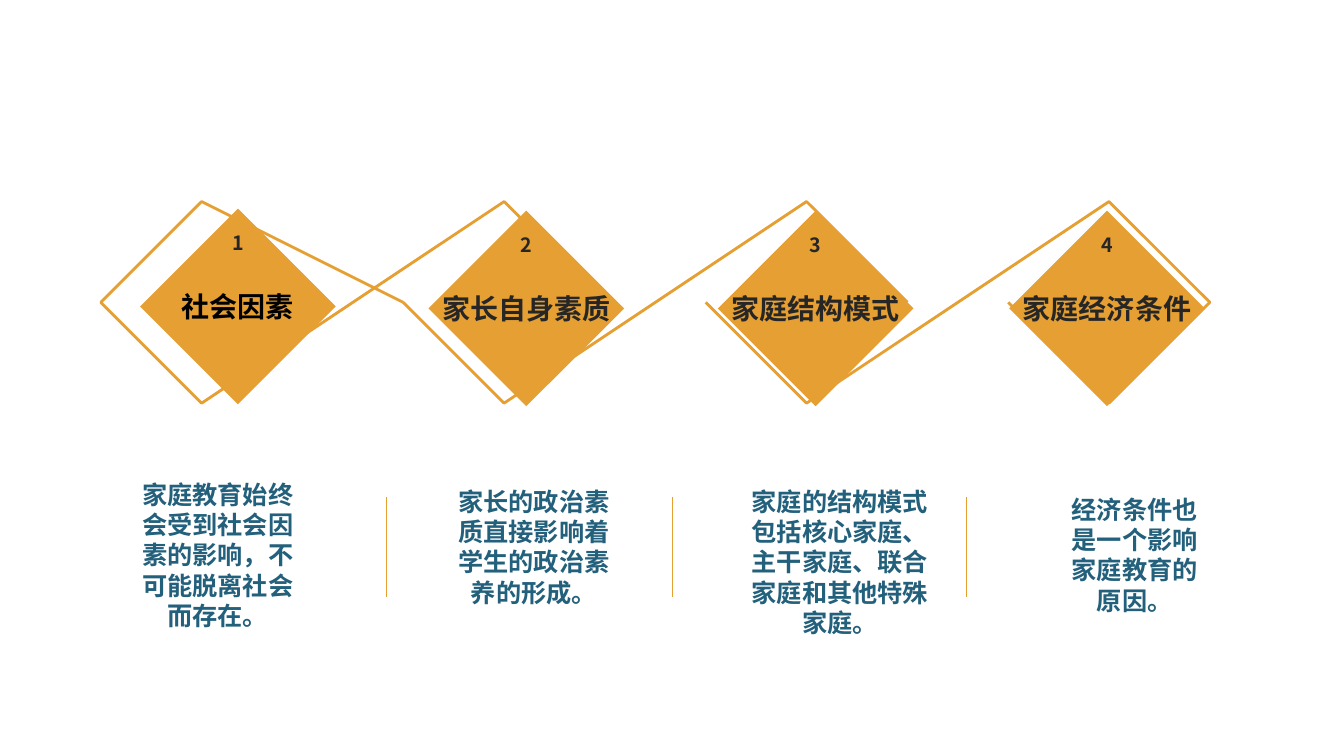
import pptx
import pptx.util
import pptx.dml.color
import pptx.enum.shapes
import pptx.enum.text
import pptx.oxml.ns
import lxml.etree

Inches = pptx.util.Inches
Pt = pptx.util.Pt
GOLD, DARK, BLUE = "E59F32", "262626", "23607C"
BOLD_JP, BOLD_SC = "Noto Sans CJK JP", "Noto Sans CJK SC"
BIG, SMALL = 1.94, 0.36

# Diamond centre, label, label colour, note, note box
FACTORS = [
    (2.36, 3.04, "社会因素", "000000",
     "家庭教育始终会受到社会因素的影响，不可能脱离社会而存在。",
     (1.19, 4.7, 1.94, 1.61)),
    (5.22, 3.06, "家长自身素质", DARK,
     "家长的政治素质直接影响着学生的政治素养的形成。",
     (4.4, 4.77, 1.79, 1.31)),
    (8.09, 3.06, "家庭结构模式", DARK,
     "家庭的结构模式包括核心家庭、主干家庭、联合家庭和其他特殊家庭。",
     (7.31, 4.77, 2.04, 1.61)),
    (10.98, 3.06, "家庭经济条件", DARK,
     "经济条件也是一个影响家庭教育的原因。",
     (10.45, 4.85, 1.61, 1.31)),
]
RIBBONS = [
    [(6.41, 2.81), (5.23, 1.63), (2.38, 4.48), (0.95, 3.06), (2.36, 1.65), (3.52, 2.81)],
    [(4.03, 3.3), (5.22, 4.5), (8.08, 1.62), (9.28, 2.83)],
    [(6.91, 3.31), (8.09, 4.49), (10.95, 1.64), (12.37, 3.06), (10.96, 4.47), (9.8, 3.31)],
]
RULES = [3.83, 6.67, 9.58]


def hue(code):
    return pptx.dml.color.RGBColor.from_string(code)


def write(shape, text, size, face, code):
    """Put one bold, centred paragraph in a shape."""
    frame = shape.text_frame
    frame.text = text
    para = frame.paragraphs[0]
    para.alignment = pptx.enum.text.PP_ALIGN.CENTER
    font = para.runs[0].font
    font.size, font.bold = Pt(size), True
    font.color.rgb = hue(code)
    font.name = face
    east = lxml.etree.SubElement(font._element, pptx.oxml.ns.qn("a:ea"))
    east.set("typeface", face)
    return frame


def diamond(slide, mid_x, mid_y, side, text, size, code):
    """Draw a gold diamond around its centre."""
    shape = slide.shapes.add_shape(
        pptx.enum.shapes.MSO_SHAPE.DIAMOND, Inches(mid_x - side / 2),
        Inches(mid_y - side / 2), Inches(side), Inches(side))
    shape.shadow.inherit = False
    shape.fill.solid()
    shape.fill.fore_color.rgb = hue(GOLD)
    shape.line.fill.background()
    frame = write(shape, text, size, BOLD_JP, code)
    frame.word_wrap = False
    frame.vertical_anchor = pptx.enum.text.MSO_ANCHOR.MIDDLE
    frame.margin_left = frame.margin_right = 0
    frame.margin_top = frame.margin_bottom = 0


def ribbon(slide, points):
    """Draw an open zigzag outline through the points."""
    pen = slide.shapes.build_freeform(*points[0], scale=Inches(1))
    pen.add_line_segments(points[1:], close=False)
    shape = pen.convert_to_shape()
    shape.shadow.inherit = False
    shape.fill.background()
    shape.line.color.rgb = hue(GOLD)
    shape.line.width = Pt(2)


def rule(slide, left, top, bottom):
    """Draw a thin upright divider."""
    line = slide.shapes.add_connector(
        pptx.enum.shapes.MSO_CONNECTOR.STRAIGHT,
        Inches(left), Inches(top), Inches(left), Inches(bottom))
    line.line.color.rgb = hue(GOLD)
    line.line.width = Pt(0.25)
    lxml.etree.SubElement(line._element.spPr, pptx.oxml.ns.qn("a:effectLst"))


def note(slide, box, text):
    """Write the explanation below a diamond."""
    shape = slide.shapes.add_textbox(*map(Inches, box))
    frame = write(shape, text, 18, BOLD_SC, BLUE)
    frame.word_wrap = True
    frame.paragraphs[0].line_spacing = Pt(21.7)


def main():
    deck = pptx.Presentation()
    deck.slide_width, deck.slide_height = Inches(13.33), Inches(7.5)
    slide = deck.slides.add_slide(deck.slide_layouts[6])

    # Zigzag outlines and dividers
    for points in RIBBONS:
        ribbon(slide, points)
    for left in RULES:
        rule(slide, left, 4.93, 5.92)

    # Numbered diamonds with notes
    for num, (mid_x, mid_y, label, code, text, box) in enumerate(FACTORS, 1):
        diamond(slide, mid_x, mid_y, BIG, label, 20, code)
        diamond(slide, mid_x, mid_y - 0.63, SMALL, str(num), 14, DARK)
        note(slide, box, text)

    deck.save("out.pptx")


if __name__ == "__main__":
    main()
